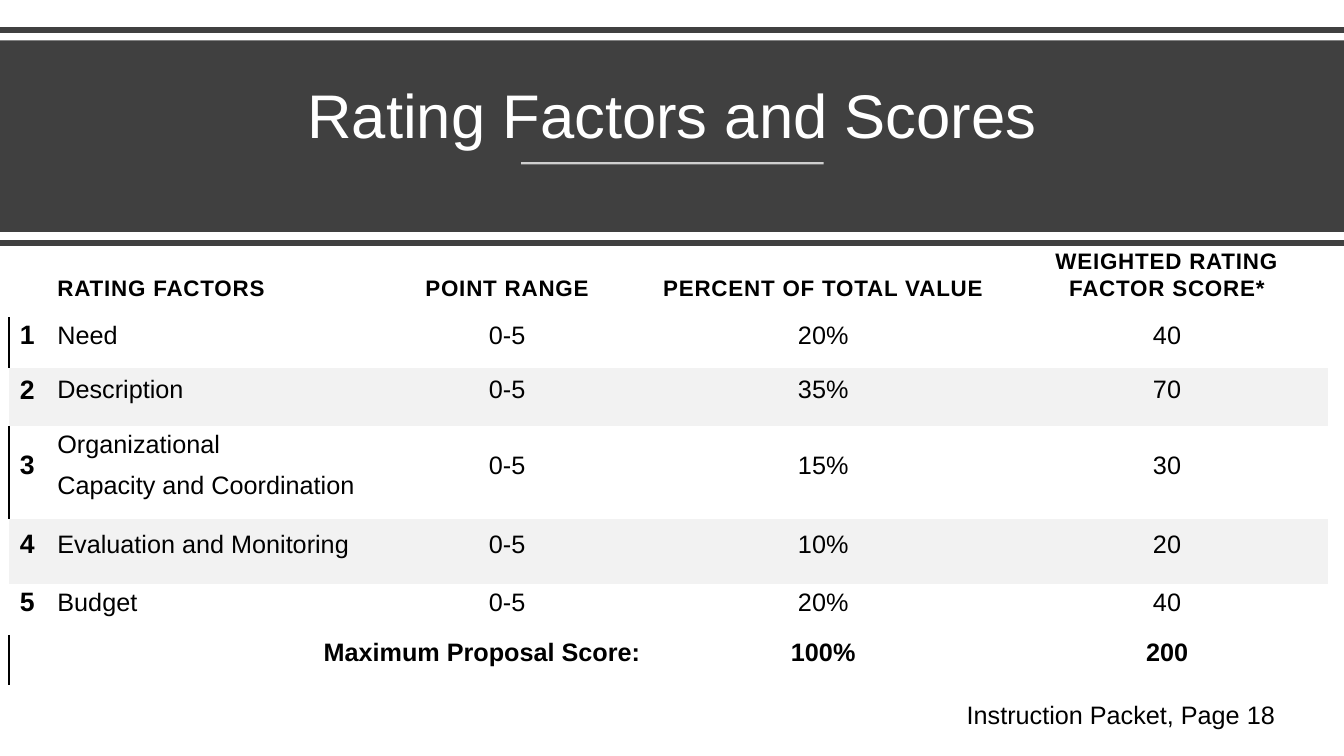
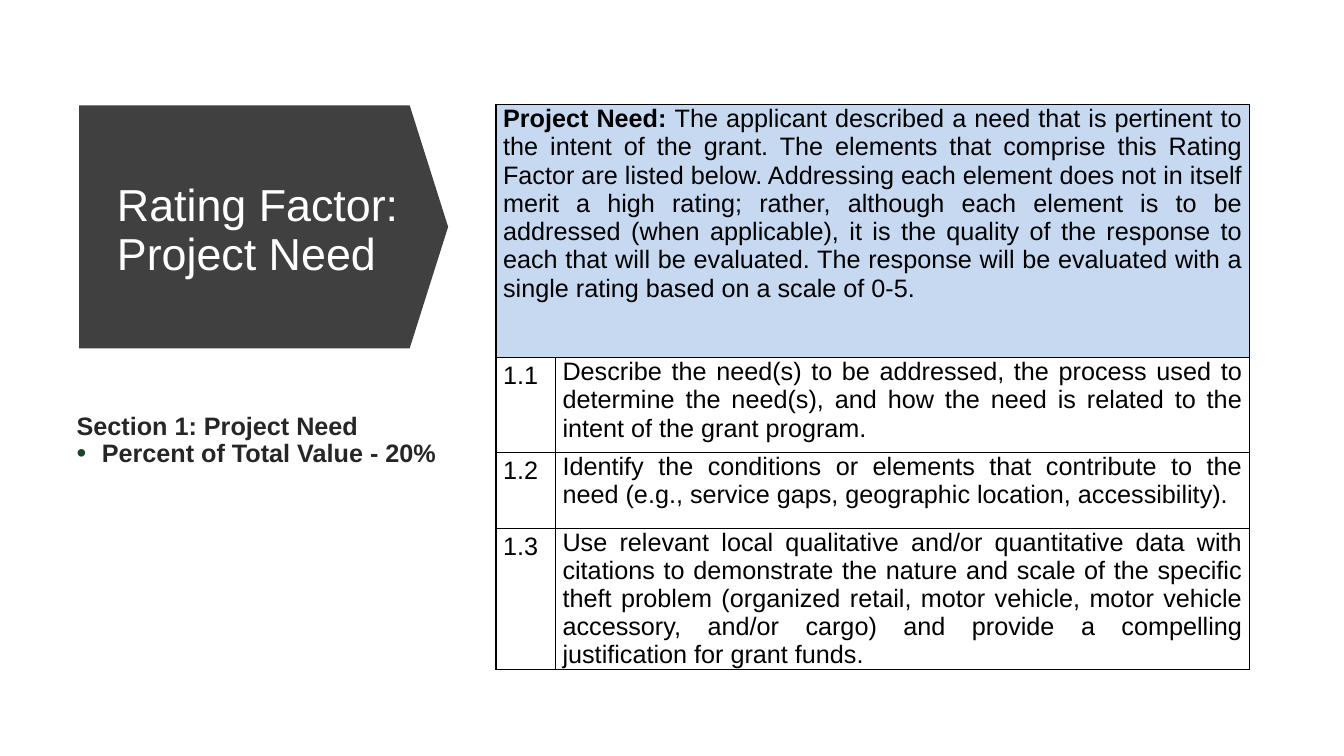
"""Build two slides on rating factors and scores."""
from lxml import etree
from pptx import Presentation
from pptx import util as u
from pptx.dml import color as clr
from pptx.enum import shapes, text
from pptx.oxml import ns

PX = 9144
FONT = "Arial"
DARK, WHITE, BLACK, INK = "404040", "FFFFFF", "000000", "262626"
STRIPE, PALE_BLUE, GREEN = "F2F2F2", "C6D9F1", "1F442A"
PLAIN_TABLE = "{2D5ABB26-0587-4C30-8999-92F81FD0307C}"
LEFT, CENTER, RIGHT, JUSTIFY = (text.PP_ALIGN.LEFT, text.PP_ALIGN.CENTER,
                                text.PP_ALIGN.RIGHT, text.PP_ALIGN.JUSTIFY)
TOP, MIDDLE, BOTTOM = (text.MSO_ANCHOR.TOP, text.MSO_ANCHOR.MIDDLE,
                       text.MSO_ANCHOR.BOTTOM)


def solid(fill, color):
    fill.solid()
    fill.fore_color.rgb = clr.RGBColor.from_string(color)


def write(p, runs, size, color=BLACK, align=LEFT, spacing=1.0, after=0):
    p.alignment, p.line_spacing = align, spacing
    p.space_before, p.space_after = u.Pt(0), u.Pt(after)
    for words, bold in runs:
        if p.runs:
            if words.startswith("\n"):
                p.add_line_break()
        r = p.add_run()
        r.text = words.lstrip("\n")
        r.font.name, r.font.size, r.font.bold = FONT, u.Pt(size), bold
        solid(r.font.fill, color)


prs = Presentation()
prs.slide_width, prs.slide_height = 1333 * PX, 750 * PX
scores = prs.slides.add_slide(prs.slide_layouts[5])
need = prs.slides.add_slide(prs.slide_layouts[1])

band = scores.shapes.add_shape(shapes.MSO_SHAPE.RECTANGLE,
                               0, 40 * PX, 1333 * PX, 190 * PX)
arrow = need.shapes.add_shape(shapes.MSO_SHAPE.DOWN_ARROW,
                              141 * PX, 42 * PX, 241 * PX, 366 * PX)
arrow.rotation = 270
arrow.adjustments[0], arrow.adjustments[1] = 1, 0.158
for sp in (band, arrow):
    sp.shadow.inherit = False
    solid(sp.fill, DARK)
    sp.line.fill.background()

for s, box, runs, size, align, anchor in (
        (scores, (58, 54, 1218, 102), [("Rating Factors and Scores", False)],
         44, CENTER, BOTTOM),
        (need, (106, 132, 307, 195),
         [("Rating Factor:", False), ("\nProject Need", False)],
         32, LEFT, MIDDLE)):
    title = s.shapes.title
    title.left, title.top, title.width, title.height = [v * PX for v in box]
    tf = title.text_frame
    tf.word_wrap, tf.auto_size = True, text.MSO_AUTO_SIZE.NONE
    tf.vertical_anchor = anchor
    write(tf.paragraphs[0], runs, size, WHITE, align, 0.9)
    s.shapes._spTree.append(title._element)

for x1, x2, y, color, width, alpha in ((0, 1333, 30, DARK, 4, 100),
                                       (517, 817, 162, WHITE, 1.5, 75),
                                       (0, 1333, 241, DARK, 4, 100)):
    rule = scores.shapes.add_connector(shapes.MSO_CONNECTOR.STRAIGHT,
                                       x1 * PX, y * PX, x2 * PX, y * PX)
    solid(rule.line.fill, color)
    rule.line.width = u.Pt(width)
    if alpha < 100:
        tint = rule._element.spPr.find(".//" + ns.qn("a:srgbClr"))
        etree.SubElement(tint, ns.qn("a:alpha")).set("val", str(alpha * 1000))
    etree.SubElement(rule._element.spPr, ns.qn("a:effectLst"))

tables = []
for s, box, cols, rows in (
        (scores, (9, 230, 1306, 445), (36, 326, 264, 363, 319),
         (80, 50, 58, 92, 65, 50, 50)),
        (need, (492, 104, 747, 546), (59, 688), (251, 94, 75, 126))):
    frame = s.shapes.add_table(len(rows), len(cols), *[v * PX for v in box])
    tbl = frame.table
    tbl.first_row = tbl.horz_banding = False
    tbl._tbl.tblPr.find(ns.qn("a:tableStyleId")).text = PLAIN_TABLE
    for col, width in zip(tbl.columns, cols):
        col.width = width * PX
    for row, height in zip(tbl.rows, rows):
        row.height = height * PX
    tables.append(tbl)
score_table, need_table = tables

score_rows = (
    ("", "RATING FACTORS", "POINT RANGE", "PERCENT OF TOTAL VALUE",
     "WEIGHTED RATING FACTOR SCORE*"),
    ("1", "Need", "0-5", "20%", "40"),
    ("2", "Description", "0-5", "35%", "70"),
    ("3", "Organizational\nCapacity and Coordination", "0-5", "15%", "30"),
    ("4", "Evaluation and Monitoring", "0-5", "10%", "20"),
    ("5", "Budget", "0-5", "20%", "40"),
    ("Maximum Proposal Score:", "", "", "100%", "200"),
)
score_table.cell(6, 0).merge(score_table.cell(6, 2))
borders = []
for i, row in enumerate(score_rows):
    head, total = i == 0, i == len(score_rows) - 1
    for j, words in enumerate(row):
        cell = score_table.cell(i, j)
        if i in (2, 4):
            solid(cell.fill, STRIPE)
        else:
            cell.fill.background()
        if not words:
            continue
        cell.vertical_anchor = BOTTOM if head else MIDDLE
        cell.margin_left = cell.margin_right = (12 if j in (1, 2, 3) else 0) * PX
        cell.margin_top, cell.margin_bottom = (16 if head else 0) * PX, 16 * PX
        size = 16 if head else 19 if j == 0 and not total else 18
        align = CENTER
        if j == 1:
            align = JUSTIFY if head else LEFT
        elif j == 0 and total:
            align = RIGHT
        tf = cell.text_frame
        for k, line in enumerate(words.split("\n")):
            p = tf.add_paragraph() if k else tf.paragraphs[0]
            write(p, [(line, head or total or j == 0)], size, BLACK, align, 1.07, 8)
            if head:
                p.runs[0].font._element.set("spc", "60")
    if i in (1, 3, 6):
        borders.append((score_table.cell(i, 0), "L"))

need_rows = (
    ("1.1", "Describe the need(s) to be addressed, the process used to determine "
            "the need(s), and how the need is related to the intent of the grant "
            "program."),
    ("1.2", "Identify the conditions or elements that contribute to the need "
            "(e.g., service gaps, geographic location, accessibility)."),
    ("1.3", "Use relevant local qualitative and/or quantitative data with "
            "citations to demonstrate the nature and scale of the specific theft "
            "problem (organized retail, motor vehicle, motor vehicle accessory, "
            "and/or cargo) and provide a compelling justification for grant funds."),
)
intro = need_table.cell(0, 0)
intro.merge(need_table.cell(0, 1))
for cell in need_table.iter_cells():
    cell.margin_left = cell.margin_right = 7 * PX
    cell.margin_top = cell.margin_bottom = 0
    cell.vertical_anchor = TOP
    cell.fill.background()
    borders.append((cell, "LRTB"))
solid(intro.fill, PALE_BLUE)
write(intro.text_frame.paragraphs[0], [
    ("Project Need: ", True),
    ("The applicant described a need that is pertinent to the intent of the "
     "grant. The elements that comprise this Rating Factor are listed below. "
     "Addressing each element does not in itself merit a high rating; rather, "
     "although each element is to be addressed (when applicable), it is the "
     "quality of the response to each that will be evaluated. The response will "
     "be evaluated with a single rating based on a scale of 0-5.", False),
], 18, align=JUSTIFY)
for i, (number, words) in enumerate(need_rows, 1):
    write(need_table.cell(i, 0).text_frame.paragraphs[0], [(number, False)],
          18, spacing=1.15, after=10)
    write(need_table.cell(i, 1).text_frame.paragraphs[0], [(words, False)],
          18, align=JUSTIFY)

for cell, sides in borders:
    tcPr = cell._tc.get_or_add_tcPr()
    for i, side in enumerate(sides):
        ln = etree.Element(ns.qn("a:ln" + side), w="12700")
        paint = etree.SubElement(ln, ns.qn("a:solidFill"))
        etree.SubElement(paint, ns.qn("a:srgbClr"), val=BLACK)
        tcPr.insert(i, ln)

note = scores.shapes.add_textbox(949 * PX, 689 * PX, 327 * PX, 40 * PX)
tf = note.text_frame
tf.word_wrap, tf.auto_size = False, text.MSO_AUTO_SIZE.SHAPE_TO_FIT_TEXT
write(tf.paragraphs[0], [("Instruction Packet, Page 18", False)], 18)

body = need.placeholders[1]
body.left, body.top, body.width, body.height = [v * PX for v in (66, 405, 407, 95)]
tf = body.text_frame
tf.word_wrap, tf.auto_size = True, text.MSO_AUTO_SIZE.NONE
for i, (words, bullet) in enumerate((("Section 1: Project Need", False),
                                     ("Percent of Total Value - 20%", True))):
    p = tf.add_paragraph() if i else tf.paragraphs[0]
    pPr = p._p.get_or_add_pPr()
    indent = 25 * PX if bullet else 0
    pPr.set("marL", str(indent))
    pPr.set("indent", str(-indent))
    if bullet:
        tint = etree.SubElement(pPr, ns.qn("a:buClr"))
        etree.SubElement(tint, ns.qn("a:srgbClr"), val=GREEN)
        etree.SubElement(pPr, ns.qn("a:buSzPct"), val="110000")
        etree.SubElement(pPr, ns.qn("a:buFont"), typeface=FONT)
        etree.SubElement(pPr, ns.qn("a:buChar"), char="•")
    else:
        etree.SubElement(pPr, ns.qn("a:buNone"))
    write(p, [(words, True)], 18, INK, spacing=0.9)

prs.save("out.pptx")
